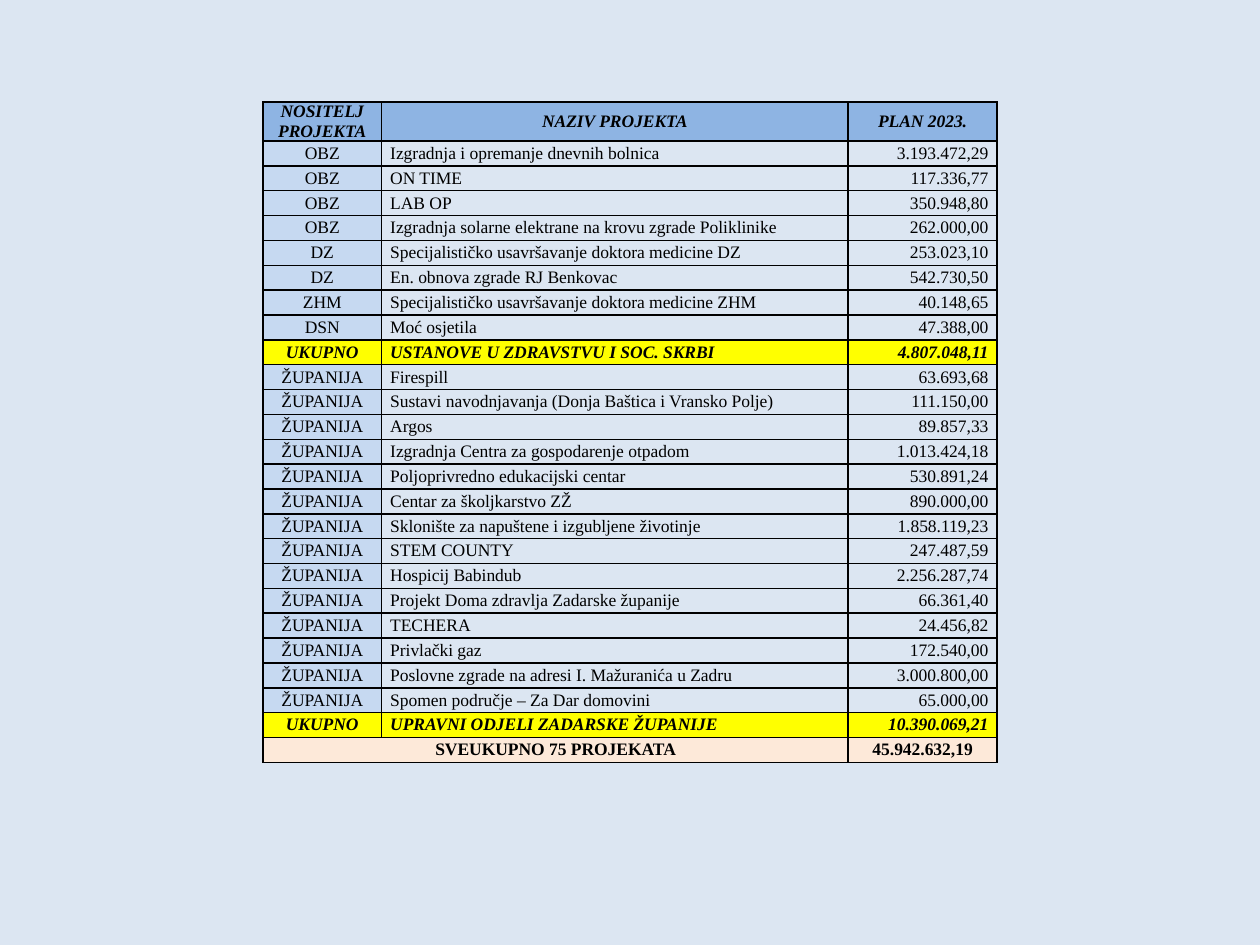
import pptx
import pptx.dml.color
import pptx.enum.text
import pptx.oxml
import pptx.oxml.ns
import pptx.util

Pt = pptx.util.Pt
ALIGN = pptx.enum.text.PP_ALIGN
MIDDLE = pptx.enum.text.MSO_ANCHOR.MIDDLE

HEADER = ("NOSITELJ\nPROJEKTA", "NAZIV PROJEKTA", "PLAN 2023.")
INSTITUTIONS = [
    ("OBZ", "Izgradnja i opremanje dnevnih bolnica", "3.193.472,29"),
    ("OBZ", "ON TIME", "117.336,77"),
    ("OBZ", "LAB OP", "350.948,80"),
    ("OBZ", "Izgradnja solarne elektrane na krovu zgrade Poliklinike", "262.000,00"),
    ("DZ", "Specijalističko usavršavanje doktora medicine DZ", "253.023,10"),
    ("DZ", "En. obnova zgrade RJ Benkovac", "542.730,50"),
    ("ZHM", "Specijalističko usavršavanje doktora medicine ZHM", "40.148,65"),
    ("DSN", "Moć osjetila", "47.388,00"),
]
COUNTY = [
    ("Firespill", "63.693,68"),
    ("Sustavi navodnjavanja (Donja Baštica i Vransko Polje)", "111.150,00"),
    ("Argos", "89.857,33"),
    ("Izgradnja Centra za gospodarenje otpadom", "1.013.424,18"),
    ("Poljoprivredno edukacijski centar", "530.891,24"),
    ("Centar za školjkarstvo ZŽ", "890.000,00"),
    ("Sklonište za napuštene i izgubljene životinje", "1.858.119,23"),
    ("STEM COUNTY", "247.487,59"),
    ("Hospicij Babindub", "2.256.287,74"),
    ("Projekt Doma zdravlja Zadarske županije", "66.361,40"),
    ("TECHERA", "24.456,82"),
    ("Privlački gaz", "172.540,00"),
    ("Poslovne zgrade na adresi I. Mažuranića u Zadru", "3.000.800,00"),
    ("Spomen područje – Za Dar domovini", "65.000,00"),
]
INSTITUTIONS_TOTAL = ("UKUPNO", "USTANOVE U ZDRAVSTVU I SOC. SKRBI", "4.807.048,11")
COUNTY_TOTAL = ("UKUPNO", "UPRAVNI ODJELI ZADARSKE ŽUPANIJE", "10.390.069,21")
GRAND_TOTAL = ("SVEUKUPNO 75 PROJEKATA", "", "45.942.632,19")

# Row kinds: fills and alignments by column, then font
CENTRED = (ALIGN.CENTER,) * 3
LISTED = (ALIGN.CENTER, ALIGN.LEFT, ALIGN.RIGHT)
KINDS = {
    "header": (("8EB4E3",) * 3, CENTRED, {"bold": True, "italic": True}),
    "project": (("C6D9F1", None, None), LISTED, {"bold": False, "italic": False}),
    "subtotal": (("FFFF00",) * 3, LISTED, {"bold": True, "italic": True}),
    "total": (("FDE9D9",) * 3, CENTRED, {"bold": True, "italic": False}),
}


def rgb(color):
    return pptx.dml.color.RGBColor.from_string(color)


def set_all(obj, values):
    for name, value in values.items():
        setattr(obj, name, value)


class Deck:
    ink = "000000"
    font = {"name": "Times New Roman", "size": Pt(10)}
    cell = {"margin_left": Pt(5), "margin_right": Pt(5), "margin_top": 0,
            "margin_bottom": 0, "vertical_anchor": MIDDLE}

    def __init__(self, prs):
        self.prs = prs

    def slide(self, background):
        self.s = self.prs.slides.add_slide(self.prs.slide_layouts[6])
        fill = self.s.background.fill
        fill.solid()
        fill.fore_color.rgb = rgb(background)

    def borders(self, cell, width=1):
        tcPr = cell._tc.get_or_add_tcPr()
        for i, side in enumerate(("lnL", "lnR", "lnT", "lnB")):
            tcPr.insert(i, pptx.oxml.parse_xml(
                f'<a:{side} {pptx.oxml.ns.nsdecls("a")} w="{Pt(width)}">'
                f'<a:solidFill><a:srgbClr val="{self.ink}"/></a:solidFill></a:{side}>'))

    def fill_cell(self, cell, text, color, align, font):
        set_all(cell, self.cell)
        if color:
            cell.fill.solid()
            cell.fill.fore_color.rgb = rgb(color)
        else:
            cell.fill.background()
        self.borders(cell)
        cell.text_frame.text = text
        for p in cell.text_frame.paragraphs:
            p.alignment = align
            set_all(p.font, self.font)
            for r in p.runs:
                set_all(r.font, {**self.font, **font})
                r.font.color.rgb = rgb(self.ink)

    def table(self, left, top, widths, heights, rows):
        table = self.s.shapes.add_table(
            len(rows), len(widths), Pt(left), Pt(top),
            Pt(sum(widths)), Pt(sum(heights))).table
        set_all(table, {"first_row": False, "horz_banding": False})
        for column, width in zip(table.columns, widths):
            column.width = Pt(width)
        for i, (kind, texts) in enumerate(rows):
            table.rows[i].height = Pt(heights[i])
            fills, aligns, font = KINDS[kind]
            for j, text in enumerate(texts):
                self.fill_cell(table.cell(i, j), text, fills[j], aligns[j], font)
        return table


def main():
    prs = pptx.Presentation()
    set_all(prs, {"slide_width": Pt(720), "slide_height": Pt(540)})
    deck = Deck(prs)
    deck.slide("DCE6F2")

    # Projects in two groups, each closed by its subtotal
    rows = [("header", HEADER)]
    rows += [("project", row) for row in INSTITUTIONS]
    rows.append(("subtotal", INSTITUTIONS_TOTAL))
    rows += [("project", ("ŽUPANIJA", *row)) for row in COUNTY]
    rows += [("subtotal", COUNTY_TOTAL), ("total", GRAND_TOTAL)]

    heights = [22.2] + [14.22] * (len(rows) - 1)
    table = deck.table(150.3, 58.4, (67.7, 266.6, 85.2), heights, rows)

    # The grand total label spans the first two columns
    last = len(rows) - 1
    table.cell(last, 0).merge(table.cell(last, 1))

    prs.save("out.pptx")


if __name__ == "__main__":
    main()
